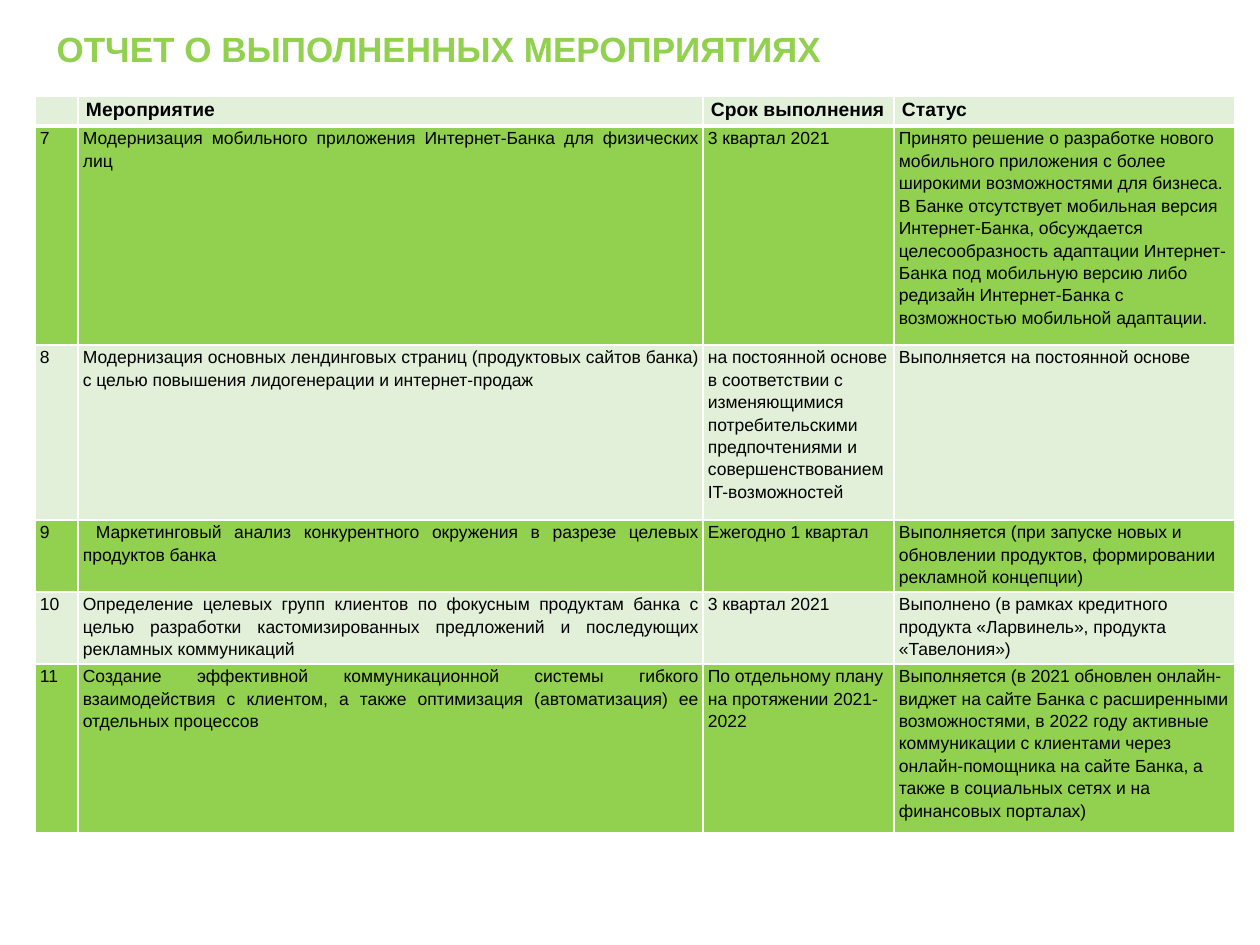
from dataclasses import dataclass

from lxml.etree import SubElement
from pptx import Presentation
from pptx.dml.color import RGBColor
from pptx.enum.text import MSO_ANCHOR, MSO_AUTO_SIZE, PP_ALIGN as Align
from pptx.oxml.ns import qn
from pptx.util import Emu, Pt

PX_PER_INCH = 126


def px(n):
    return Emu(round(n * 914400 / PX_PER_INCH))


@dataclass(frozen=True)
class Theme:
    font: str = "Arial"
    green: str = "92D050"
    pale: str = "E2F0D9"
    line: str = "FFFFFF"
    text: str = "000000"
    title_size: int = 20
    head_size: int = 11
    body_size: int = 10


class SlideBuilder:
    def __init__(self, slide, theme):
        self.s, self.theme = slide, theme

    def add_run(self, p, text, size, color, bold=False):
        r = p.add_run()
        r.text = text
        f = r.font
        f.name, f.size, f.bold = self.theme.font, Pt(size), bold
        f.color.rgb = RGBColor.from_string(color)

    def title(self, text, left, top, width, height):
        sp = self.s.shapes.title
        sp.left, sp.top, sp.width, sp.height = map(px, (left, top, width, height))
        tf = sp.text_frame
        tf.word_wrap, tf.auto_size = True, MSO_AUTO_SIZE.NONE
        tf.vertical_anchor = MSO_ANCHOR.BOTTOM
        p = tf.paragraphs[0]
        p.alignment, p.line_spacing = Align.LEFT, 0.9
        self.add_run(p, text, self.theme.title_size, self.theme.green, True)

    def borders(self, cell, **widths):
        tc_pr = cell._tc.get_or_add_tcPr()
        for side in "LRTB":
            ln = SubElement(tc_pr, qn(f"a:ln{side}"), w=str(Pt(widths.get(side, 1))))
            fill = SubElement(ln, qn("a:solidFill"))
            SubElement(fill, qn("a:srgbClr"), val=self.theme.line)

    def cell(self, cell, text, row, col, indent=0):
        t, head = self.theme, row == 0
        size = t.head_size if head else t.body_size
        # Heavier rule between the header and the first row
        self.borders(cell, B=3 if head else 1, T=3 if row == 1 else 1)
        cell.fill.solid()
        cell.fill.fore_color.rgb = RGBColor.from_string(t.green if row % 2 else t.pale)
        cell.margin_left = cell.margin_right = px(8 if head else 5)
        cell.margin_top = cell.margin_bottom = 0
        p = cell.text_frame.paragraphs[0]
        p.alignment = Align.JUSTIFY if col == 1 else Align.LEFT
        p.line_spacing = 1.15
        if indent:
            p._p.get_or_add_pPr().set("indent", str(px(indent)))
        if text:
            self.add_run(p, text, size, t.text, head)
        else:
            SubElement(p._p, qn("a:endParaRPr"), sz=str(size * 100))

    def table(self, rows, left, top, widths, heights, indents):
        frame = self.s.shapes.add_table(len(rows), len(widths), px(left), px(top),
                                        px(sum(widths)), px(sum(heights)))
        tbl = frame.table
        for column, width in zip(tbl.columns, widths):
            column.width = px(width)
        for i, (values, height) in enumerate(zip(rows, heights)):
            tbl.rows[i].height = px(height)
            for j, text in enumerate(values):
                self.cell(tbl.cell(i, j), text, i, j, indents.get((i, j), 0))


ROWS = [
    ("", "Мероприятие", "Срок выполнения", "Статус"),
    ("7",
     "Модернизация мобильного приложения Интернет-Банка для физических лиц",
     "3 квартал 2021",
     "Принято решение о разработке нового мобильного приложения с более широкими "
     "возможностями для бизнеса. В Банке отсутствует мобильная версия "
     "Интернет-Банка, обсуждается целесообразность адаптации Интернет-Банка под "
     "мобильную версию либо редизайн Интернет-Банка с возможностью мобильной "
     "адаптации."),
    ("8",
     "Модернизация основных лендинговых страниц (продуктовых сайтов банка) с целью "
     "повышения лидогенерации и интернет-продаж",
     "на постоянной основе в соответствии с изменяющимися потребительскими "
     "предпочтениями и совершенствованием IT-возможностей",
     "Выполняется на постоянной основе"),
    ("9",
     "Маркетинговый анализ конкурентного окружения в разрезе целевых продуктов банка",
     "Ежегодно 1 квартал",
     "Выполняется (при запуске новых и обновлении продуктов, формировании "
     "рекламной концепции)"),
    ("10",
     "Определение целевых групп клиентов по фокусным продуктам банка с целью "
     "разработки кастомизированных предложений и последующих рекламных коммуникаций",
     "3 квартал 2021",
     "Выполнено (в рамках кредитного продукта «Ларвинель», продукта "
     "«Тавелония»)"),
    ("11",
     "Создание эффективной коммуникационной системы гибкого взаимодействия с "
     "клиентом, а также оптимизация (автоматизация) ее отдельных процессов",
     "По отдельному плану на протяжении 2021-2022",
     "Выполняется (в 2021 обновлен онлайн-виджет на сайте Банка с расширенными "
     "возможностями, в 2022 году активные коммуникации с клиентами через "
     "онлайн-помощника на сайте Банка, а также в социальных сетях и на "
     "финансовых порталах)"),
]


def main():
    prs = Presentation()
    prs.slide_width, prs.slide_height = px(1260), px(945)
    slide = prs.slides.add_slide(prs.slide_layouts[5])
    page = SlideBuilder(slide, Theme())

    # Heading
    page.title("ОТЧЕТ О ВЫПОЛНЕННЫХ МЕРОПРИЯТИЯХ", 44, 19, 1113, 57)

    # Report table
    page.table(ROWS, 35, 96, widths=(43, 625, 191, 341),
               heights=(30, 219, 175, 72, 72, 169), indents={(3, 1): 13})

    prs.save("out.pptx")


if __name__ == "__main__":
    main()
